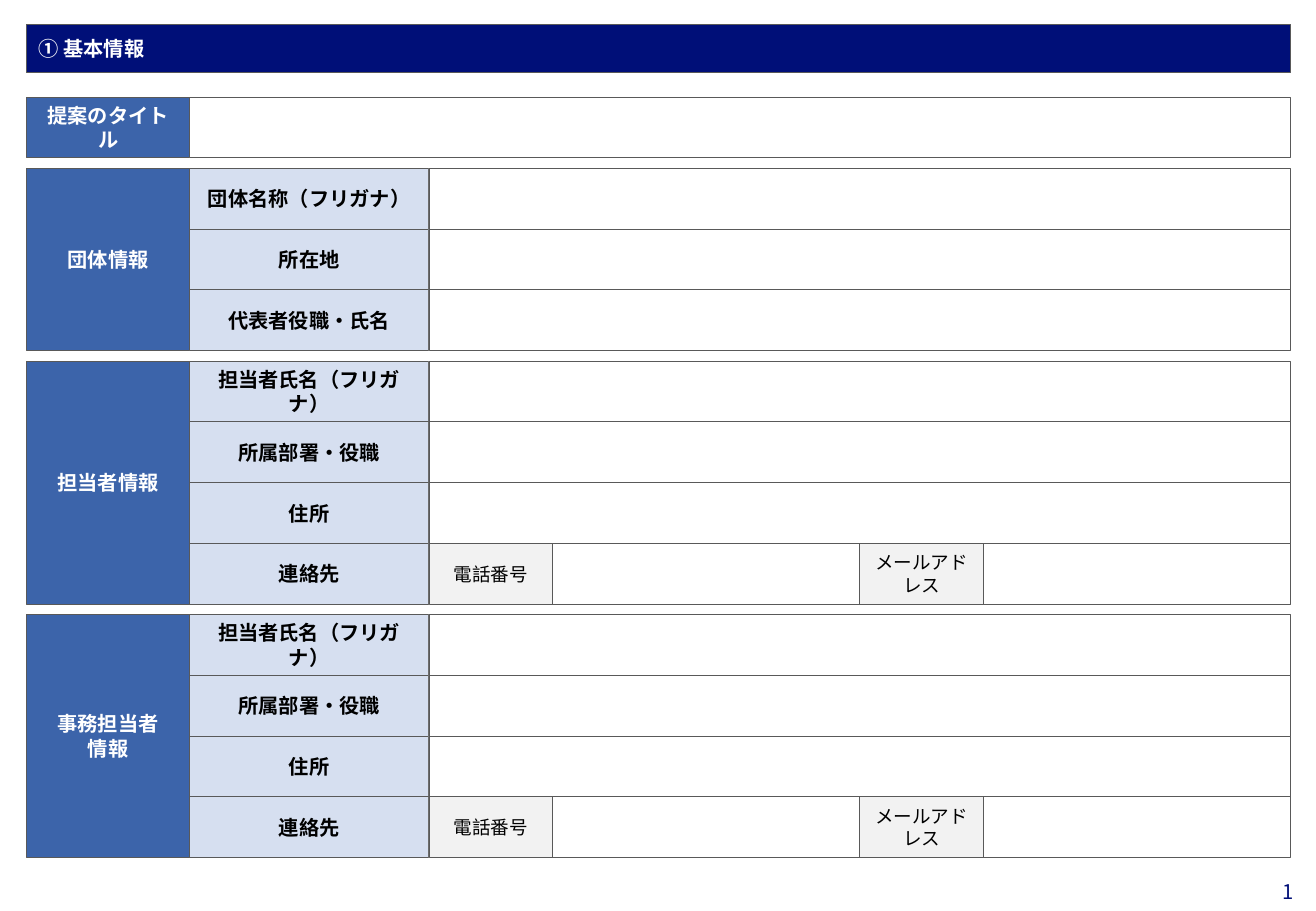
from pptx import Presentation
from pptx.dml.color import RGBColor
from pptx.enum.shapes import MSO_SHAPE as SHAPE
from pptx.enum.text import MSO_ANCHOR as ANCHOR, PP_ALIGN as ALIGN
from pptx.oxml.ns import qn
from pptx.util import Inches, Pt
from lxml import etree

FONT = "Noto Sans CJK JP"
COLORS = {"navy": "000F78", "blue": "3C64AA", "pale": "D6DFF0", "gray": "F2F2F2",
          "white": "FFFFFF", "black": "000000", "border": "595959"}
WIDTH, HEIGHT = 10.83, 7.5
LEFT, FORM_W = 0.22, 10.4
TOP, BOTTOM, ROW = 0.8, 7.06, 0.5
SECTION_W, LABEL_W, SUBLABEL_W = 1.34, 1.97, 1.02
CONTACT = ["電話番号", "メールアドレス"]
PERSON_ROWS = [("担当者氏名（フリガナ）", []), ("所属部署・役職", []), ("住所", []), ("連絡先", CONTACT)]
SECTIONS = [
    ("提案のタイトル", []),
    ("団体情報", [("団体名称（フリガナ）", []), ("所在地", []), ("代表者役職・氏名", [])]),
    ("担当者情報", PERSON_ROWS),
    ("事務担当者\n情報", PERSON_ROWS),
]


def rgb(name):
    """Return the named colour."""
    return RGBColor.from_string(COLORS[name])


def write(tf, text, color, size=12, bold=False, align=ALIGN.CENTER):
    """Fill a text frame with paragraphs of one style, centred vertically."""
    tf.word_wrap = True
    tf.vertical_anchor = ANCHOR.MIDDLE
    tf.text = text
    for p in tf.paragraphs:
        p.alignment = align
        p.font.name, p.font.size, p.font.bold = FONT, Pt(size), bold
        p.font.color.rgb = rgb(color)
        style = p._p.pPr.find(qn("a:defRPr"))
        etree.SubElement(style, qn("a:ea"), typeface=FONT)


def add_cell(shapes, x, y, w, h, fill, text="", color="black", **style):
    """Draw one bordered cell of the form."""
    s = shapes.add_shape(SHAPE.RECTANGLE, Inches(x), Inches(y), Inches(w), Inches(h))
    s.shadow.inherit = False
    s.fill.solid()
    s.fill.fore_color.rgb = rgb(fill)
    s.line.color.rgb = rgb("border")
    s.line.width = Pt(0.5)
    if text:
        write(s.text_frame, text, color, **style)


def add_entry(shapes, x, y, w, sublabels):
    """Draw the entry area of a row, split evenly among its sublabels."""
    if not sublabels:
        add_cell(shapes, x, y, w, ROW, "white")
    part = w / max(len(sublabels), 1)
    for i, sublabel in enumerate(sublabels):
        left = x + i * part
        add_cell(shapes, left, y, SUBLABEL_W, ROW, "gray", sublabel, size=11)
        add_cell(shapes, left + SUBLABEL_W, y, part - SUBLABEL_W, ROW, "white")


def add_section(slide, x, y, w, title, rows):
    """Draw a titled group of rows and return its height."""
    shapes = slide.shapes.add_group_shape().shapes
    height = ROW * max(len(rows), 1)
    add_cell(shapes, x, y, SECTION_W, height, "blue", title, "white", bold=True)
    x, w = x + SECTION_W, w - SECTION_W
    if not rows:
        add_entry(shapes, x, y, w, [])
    for i, (label, sublabels) in enumerate(rows):
        top = y + i * ROW
        add_cell(shapes, x, top, LABEL_W, ROW, "pale", label, bold=True)
        add_entry(shapes, x + LABEL_W, top, w - LABEL_W, sublabels)
    return height


def add_page_number(slide, x, y, w, h, number):
    """Write the page number at the right of the box."""
    tf = slide.shapes.add_textbox(Inches(x), Inches(y), Inches(w), Inches(h)).text_frame
    tf.margin_left = tf.margin_top = tf.margin_bottom = 0
    tf.margin_right = Inches(0.18)
    write(tf, number, "navy", align=ALIGN.RIGHT)


def add_form(prs):
    """Build the basic information form."""
    slide = prs.slides.add_slide(prs.slide_layouts[6])
    add_page_number(slide, WIDTH - 0.53, 7.24, 0.53, 0.19, "1")
    add_cell(slide.shapes, LEFT, 0.2, FORM_W, 0.4, "navy", "① 基本情報", "white",
             bold=True, align=ALIGN.LEFT)
    row_count = sum(max(len(rows), 1) for _, rows in SECTIONS)
    gap = (BOTTOM - TOP - row_count * ROW) / (len(SECTIONS) - 1)
    y = TOP
    for title, rows in SECTIONS:
        y += add_section(slide, LEFT, y, FORM_W, title, rows) + gap


def main():
    """Create and save the presentation."""
    prs = Presentation()
    prs.slide_width, prs.slide_height = Inches(WIDTH), Inches(HEIGHT)
    add_form(prs)
    prs.save("out.pptx")


if __name__ == "__main__":
    main()
